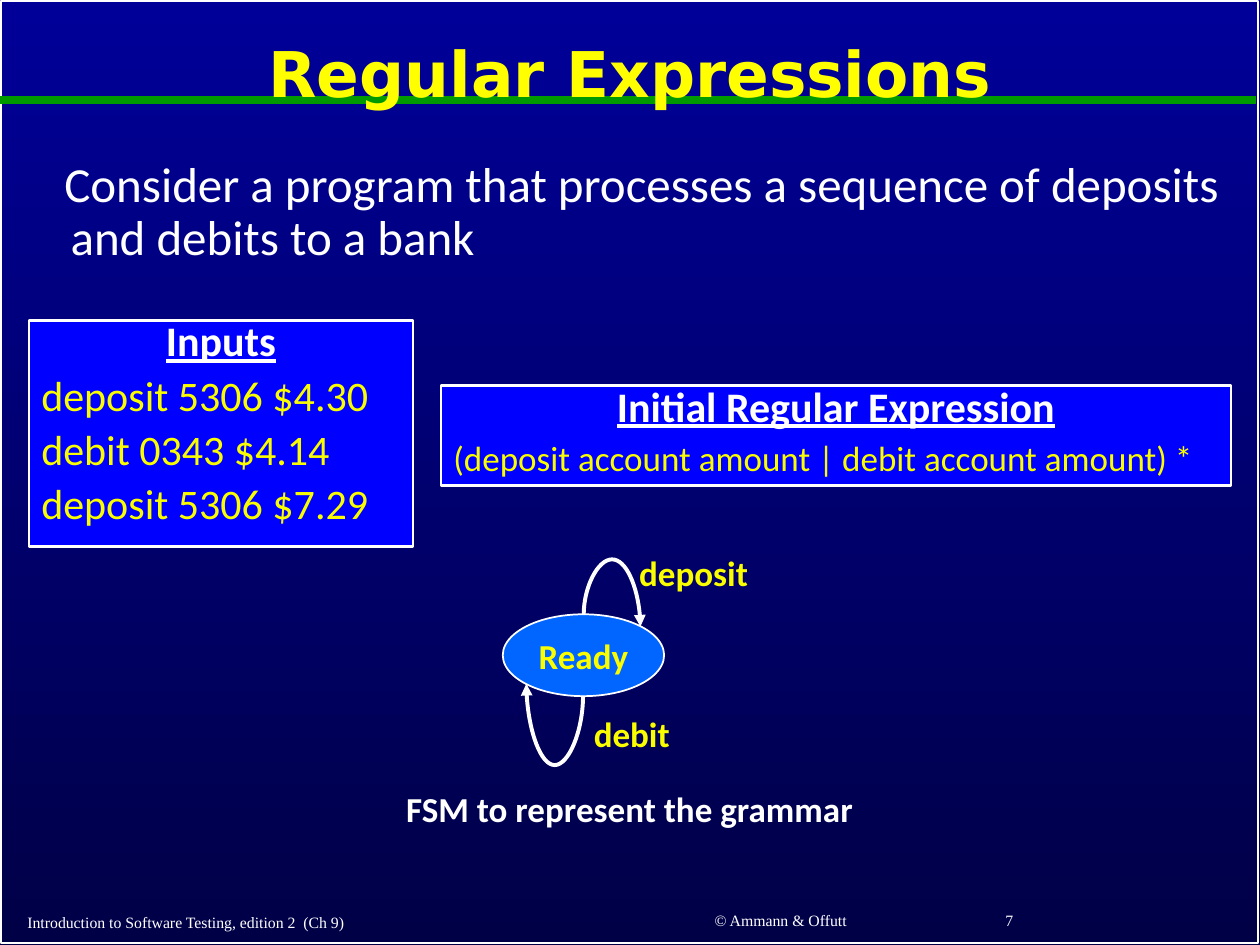
from dataclasses import dataclass

from lxml import etree
from pptx import Presentation
from pptx.dml.color import RGBColor
from pptx.enum import shapes, text
from pptx.oxml import ns
from pptx.util import Pt

WHITE = RGBColor(0xFF, 0xFF, 0xFF)
YELLOW = RGBColor(0xFF, 0xFF, 0x00)
SOFT_YELLOW = RGBColor(0xFA, 0xFD, 0x00)
GREEN = RGBColor(0x00, 0x99, 0x00)
BOX_BLUE = RGBColor(0x00, 0x00, 0xFF)
STATE_BLUE = RGBColor(0x00, 0x66, 0xFF)
NIGHT_TOP = RGBColor(0x00, 0x00, 0x99)
NIGHT_BOTTOM = RGBColor(0x00, 0x00, 0x47)

LEFT, CENTER = text.PP_ALIGN.LEFT, text.PP_ALIGN.CENTER
TOP, MIDDLE, BOTTOM = (text.MSO_ANCHOR.TOP, text.MSO_ANCHOR.MIDDLE,
                       text.MSO_ANCHOR.BOTTOM)
RECT, OVAL = shapes.MSO_SHAPE.RECTANGLE, shapes.MSO_SHAPE.OVAL


@dataclass
class Area:
    """A place on the slide, in points."""
    left: float
    top: float
    width: float
    height: float

    def lengths(self):
        return [Pt(v) for v in (self.left, self.top, self.width, self.height)]


@dataclass
class Panel:
    area: Area
    heading: str
    lines: list[str]
    size: float


@dataclass
class Label:
    area: Area
    wording: str
    color: RGBColor = SOFT_YELLOW


@dataclass
class Footer:
    area: Area
    wording: str
    align: text.PP_ALIGN = LEFT


@dataclass
class Loop:
    """A curved arrow; its area is the one before rotation."""
    area: Area
    rotation: int
    bend: int


def write(frame, wording, *, size, color=WHITE, font="Calibri", bold=False,
          underline=False, align=LEFT, anchor=TOP, wrap=True, spacing=1.0,
          before=0, more=False):
    """Set the first paragraph of a frame, or append one if more is true."""
    frame.word_wrap = wrap
    frame.vertical_anchor = anchor
    paragraph = frame.add_paragraph() if more else frame.paragraphs[0]
    paragraph.alignment = align
    paragraph.line_spacing = spacing
    paragraph.space_before = Pt(before)
    run = paragraph.add_run()
    run.text = wording
    run.font.name, run.font.size = font, Pt(size)
    run.font.bold, run.font.underline = bold, underline
    run.font.color.rgb = color
    return paragraph


def add_text(slide, area: Area, wording: str, **style):
    box = slide.shapes.add_textbox(*area.lengths())
    return write(box.text_frame, wording, **style)


def add_outlined(slide, kind, area: Area, fill, weight: float):
    shape = slide.shapes.add_shape(kind, *area.lengths())
    shape.shadow.inherit = False
    if fill is None:
        shape.fill.background()
    else:
        shape.fill.solid()
        shape.fill.fore_color.rgb = fill
    shape.line.color.rgb, shape.line.width = WHITE, Pt(weight)
    return shape


def add_line(slide, kind, start, end, color, weight: float):
    line = slide.shapes.add_connector(kind, *[Pt(v) for v in (*start, *end)])
    line.line.color.rgb, line.line.width = color, Pt(weight)
    etree.SubElement(line.element.spPr, ns.qn("a:effectLst"))
    return line


def add_panel(slide, panel: Panel):
    frame = add_outlined(slide, RECT, panel.area, BOX_BLUE, 1.5).text_frame
    write(frame, panel.heading, size=24, bold=True, underline=True,
          align=CENTER, spacing=0.75)
    for line in panel.lines:
        write(frame, line, size=panel.size, color=SOFT_YELLOW, spacing=0.75,
              before=9.5, more=True)


def add_loop(slide, loop: Loop):
    area = loop.area
    arrow = add_line(slide, shapes.MSO_CONNECTOR.CURVE,
                     (area.left, area.top + area.height),
                     (area.left + area.width, area.top), WHITE, 2.25)
    properties = arrow.element.spPr
    properties.find(ns.qn("a:xfrm")).set("rot", str(loop.rotation * 60000))
    # How far the curve swings out from the state
    guides = properties.find(ns.qn("a:prstGeom")).find(ns.qn("a:avLst"))
    etree.SubElement(guides, ns.qn("a:gd"), name="adj1", fmla=f"val {loop.bend}")
    etree.SubElement(properties.find(ns.qn("a:ln")), ns.qn("a:tailEnd"),
                     type="triangle")


PANELS = [
    Panel(Area(16.5, 183, 219.5, 129.5), "Inputs",
          ["deposit 5306 $4.30", "debit 0343 $4.14", "deposit 5306 $7.29"], 24),
    Panel(Area(252, 220.3, 451.5, 57), "Initial Regular Expression",
          ["(deposit account amount | debit account amount) *"], 20),
]
LOOPS = [
    Loop(Area(346.3, 338.4, 6.9, 32.4), 90, -458200),
    Loop(Area(313.5, 378, 6.9, 32.4), 270, -574500),
]
LABELS = [
    Label(Area(353.5, 311.8, 85.7, 31.7), "deposit"),
    Label(Area(325.4, 403.4, 71.3, 31.7), "debit"),
    Label(Area(211.8, 446.4, 296, 55.4), "FSM to represent the grammar", WHITE),
]
FOOTERS = [
    Footer(Area(8.6, 513.4, 307.4, 22.3),
           "Introduction to Software Testing, edition 2  (Ch 9)"),
    Footer(Area(332, 514.8, 228.2, 20.2), "© Ammann & Offutt", CENTER),
    Footer(Area(567.4, 514.1, 141.8, 20.9), "7"),
]


def main():
    deck = Presentation()
    deck.slide_width, deck.slide_height = Pt(720), Pt(540)
    slide = deck.slides.add_slide(deck.slide_layouts[5])

    # Background, frame and rule
    night = slide.background.fill
    night.gradient()
    night.gradient_angle = 270
    for stop, color in zip(night.gradient_stops, (NIGHT_TOP, NIGHT_BOTTOM)):
        stop.color.rgb = color
    add_outlined(slide, RECT, Area(0.7, 0.7, 718, 538), None, 1)
    rule = add_line(slide, shapes.MSO_CONNECTOR.STRAIGHT, (0, 57.4),
                    (718, 57.4), GREEN, 4.5)

    # Title, drawn over the rule
    title = slide.shapes.title
    title.left, title.top, title.width, title.height = Area(
        7.2, 7.9, 705.6, 72).lengths()
    write(title.text_frame, "Regular Expressions", size=36, color=YELLOW,
          font="DejaVu Sans", bold=True, align=CENTER, anchor=MIDDLE,
          spacing=0.9)
    rule.element.addnext(title.element)

    # Introduction, with a slightly hanging first line
    intro = add_text(slide, Area(10.8, 87.8, 698.4, 70.6),
                     "Consider a program that processes a sequence of deposits "
                     "and debits to a bank", size=28, spacing=0.9)
    indents = intro._p.get_or_add_pPr()
    indents.set("marL", str(Pt(22.5)))
    indents.set("indent", str(Pt(-3.6)))

    for panel in PANELS:
        add_panel(slide, panel)

    # State machine
    ready = add_outlined(slide, OVAL, Area(287.3, 351, 92.2, 46.8), STATE_BLUE, 1)
    write(ready.text_frame, "Ready", size=20, color=SOFT_YELLOW, bold=True,
          align=CENTER, anchor=MIDDLE, wrap=False)
    for loop in LOOPS:
        add_loop(slide, loop)
    for label in LABELS:
        add_text(slide, label.area, label.wording, size=20, color=label.color,
                 bold=True, align=CENTER)

    # Footer
    for footer in FOOTERS:
        add_text(slide, footer.area, footer.wording, size=9,
                 font="Times New Roman", align=footer.align, anchor=BOTTOM)

    deck.save("out.pptx")


if __name__ == "__main__":
    main()
